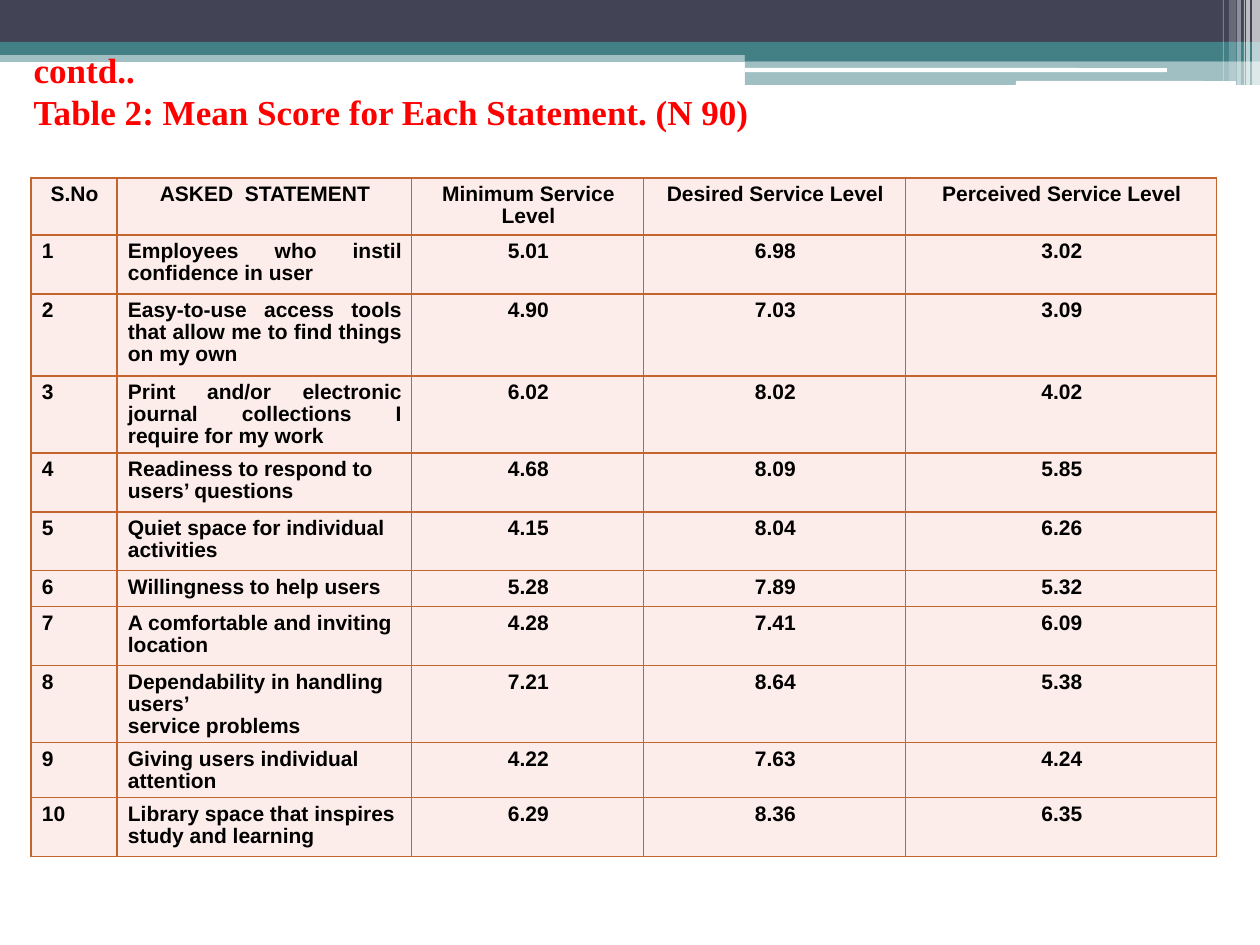
from dataclasses import dataclass
from typing import NamedTuple

from lxml.etree import SubElement
from pptx import Presentation
from pptx.dml.color import RGBColor
from pptx.enum.shapes import MSO_SHAPE as Preset
from pptx.enum.text import MSO_ANCHOR as Anchor
from pptx.enum.text import MSO_AUTO_SIZE as AutoSize
from pptx.enum.text import PP_ALIGN as Align
from pptx.oxml.ns import qn
from pptx.util import Emu, Pt


@dataclass(frozen=True)
class Theme:
    slate: str = "424456"
    teal: str = "438086"
    white: str = "FFFFFF"
    title_color: str = "FF0000"
    text_color: str = "000000"
    cell_fill: str = "FDEDEA"
    border: str = "C4652D"
    title_font: str = "Times New Roman"
    table_font: str = "Arial"
    title_size: float = 20
    table_size: float = 12
    border_width: float = 0.75
    line_spacing: float = 0.93


class Block(NamedTuple):
    left: int
    top: int
    width: int
    height: int
    color: str
    opacity: int = 100
    preset: Preset = Preset.RECTANGLE


class Statement(NamedTuple):
    text: str
    minimum: str
    desired: str
    perceived: str
    height: int
    align: Align = Align.LEFT


THEME = Theme()
EMU_PER_PX = 914400 / 126

BLOCKS = [
    Block(0, 50, 1260, 12, THEME.teal, 50),
    Block(0, 0, 1260, 42, THEME.slate),
    Block(0, 42, 1260, 13, THEME.teal),
    Block(745, 49, 515, 12, THEME.teal),
    Block(745, 55, 515, 30, THEME.teal, 50),
    Block(745, 68, 422, 4, THEME.white, 100, Preset.ROUNDED_RECTANGLE),
    Block(1016, 81, 220, 5, THEME.white, 100, Preset.ROUNDED_RECTANGLE),
    Block(1252, 0, 8, 85, THEME.white, 65),
    Block(1246, 0, 4, 85, THEME.white, 65),
    Block(1244, 0, 1, 85, THEME.white, 60),
    Block(1237, 0, 4, 85, THEME.white, 40),
    Block(1229, 0, 7, 81, THEME.white, 20),
    Block(1223, 0, 1, 81, THEME.white, 30),
]

HEADINGS = ["S.No", "ASKED\u00a0 STATEMENT", "Minimum Service Level",
            "Desired Service Level", "Perceived Service Level"]
HEADING_HEIGHT = 57
COLUMN_WIDTHS = [86, 295, 232, 262, 311]
TABLE_LEFT, TABLE_TOP = 31, 178

STATEMENTS = [
    Statement("Employees who instil confidence in user",
              "5.01", "6.98", "3.02", 59, Align.JUSTIFY),
    Statement("Easy-to-use access tools that allow me to find things on my own",
              "4.90", "7.03", "3.09", 82, Align.JUSTIFY),
    Statement("Print and/or electronic journal collections I require for my work",
              "6.02", "8.02", "4.02", 77, Align.JUSTIFY),
    Statement("Readiness to respond to users’ questions", "4.68", "8.09", "5.85", 59),
    Statement("Quiet space for individual activities", "4.15", "8.04", "6.26", 59),
    Statement("Willingness to help users", "5.28", "7.89", "5.32", 36),
    Statement("A comfortable and inviting location", "4.28", "7.41", "6.09", 59),
    Statement("Dependability in handling users’\nservice problems",
              "7.21", "8.64", "5.38", 77),
    Statement("Giving users individual attention", "4.22", "7.63", "4.24", 55),
    Statement("Library space that inspires study and learning",
              "6.29", "8.36", "6.35", 59),
]


def px(length: int) -> Emu:
    return Emu(round(length * EMU_PER_PX))


def set_attributes(target, values: dict) -> None:
    for name, value in values.items():
        setattr(target, name, value)


def format_font(font, name: str, size: float, color: str) -> None:
    set_attributes(font, {"name": name, "size": Pt(size), "bold": True})
    font.color.rgb = RGBColor.from_string(color)


def draw_block(slide, block: Block) -> None:
    shape = slide.shapes.add_shape(block.preset, *map(px, block[:4]))
    shape.shadow.inherit = False
    shape.line.fill.background()
    shape.fill.solid()
    shape.fill.fore_color.rgb = RGBColor.from_string(block.color)
    if block.opacity < 100:
        color = shape.fill._xPr.find(qn("a:solidFill"))[0]
        SubElement(color, qn("a:alpha"), val=str(block.opacity * 1000))


def write_title(slide, text: str) -> None:
    title = slide.shapes.title
    slide.shapes._spTree.append(title._element)
    set_attributes(title, {"left": px(21), "top": px(41),
                           "width": px(1176), "height": px(98)})
    frame = title.text_frame
    set_attributes(frame, {"text": text, "word_wrap": True,
                           "auto_size": AutoSize.NONE,
                           "vertical_anchor": Anchor.MIDDLE})
    paragraph = frame.paragraphs[0]
    paragraph.alignment = Align.LEFT
    for run in paragraph.runs:
        format_font(run.font, THEME.title_font, THEME.title_size, THEME.title_color)


def draw_borders(cell) -> None:
    properties = cell._tc.get_or_add_tcPr()
    for index, side in enumerate(("a:lnL", "a:lnR", "a:lnT", "a:lnB")):
        line = SubElement(properties, qn(side), w=str(Pt(THEME.border_width)))
        fill = SubElement(line, qn("a:solidFill"))
        SubElement(fill, qn("a:srgbClr"), val=THEME.border)
        properties.insert(index, line)


def write_cell(cell, text: str, align: Align) -> None:
    set_attributes(cell, {"text": text, "vertical_anchor": Anchor.TOP,
                          "margin_left": px(10), "margin_right": px(10),
                          "margin_top": px(6), "margin_bottom": px(5)})
    cell.fill.solid()
    cell.fill.fore_color.rgb = RGBColor.from_string(THEME.cell_fill)
    draw_borders(cell)
    for paragraph in cell.text_frame.paragraphs:
        set_attributes(paragraph, {"alignment": align,
                                   "line_spacing": THEME.line_spacing})
        paragraph._p.get_or_add_pPr().set("marL", str(px(1)))
        for run in paragraph.runs:
            format_font(run.font, THEME.table_font, THEME.table_size, THEME.text_color)


def draw_table(slide) -> None:
    heights = [HEADING_HEIGHT] + [statement.height for statement in STATEMENTS]
    table = slide.shapes.add_table(
        len(heights), len(COLUMN_WIDTHS), px(TABLE_LEFT), px(TABLE_TOP),
        px(sum(COLUMN_WIDTHS)), px(sum(heights))).table
    set_attributes(table, {"first_row": False, "horz_banding": False})
    for column, width in zip(table.columns, COLUMN_WIDTHS):
        column.width = px(width)
    for row, height in zip(table.rows, heights):
        row.height = px(height)
    for column, heading in enumerate(HEADINGS):
        write_cell(table.cell(0, column), heading, Align.CENTER)
    for number, statement in enumerate(STATEMENTS, start=1):
        aligns = [Align.LEFT, statement.align] + [Align.CENTER] * 3
        for column, (text, align) in enumerate(
                zip((str(number), *statement[:4]), aligns)):
            write_cell(table.cell(number, column), text, align)


def main() -> None:
    presentation = Presentation()
    set_attributes(presentation, {"slide_width": px(1260), "slide_height": px(945)})
    slide = presentation.slides.add_slide(presentation.slide_layouts[5])
    for block in BLOCKS:
        draw_block(slide, block)
    write_title(slide, "contd..\vTable 2: Mean Score for Each Statement. (N 90)")
    draw_table(slide)
    presentation.save("out.pptx")


if __name__ == "__main__":
    main()
